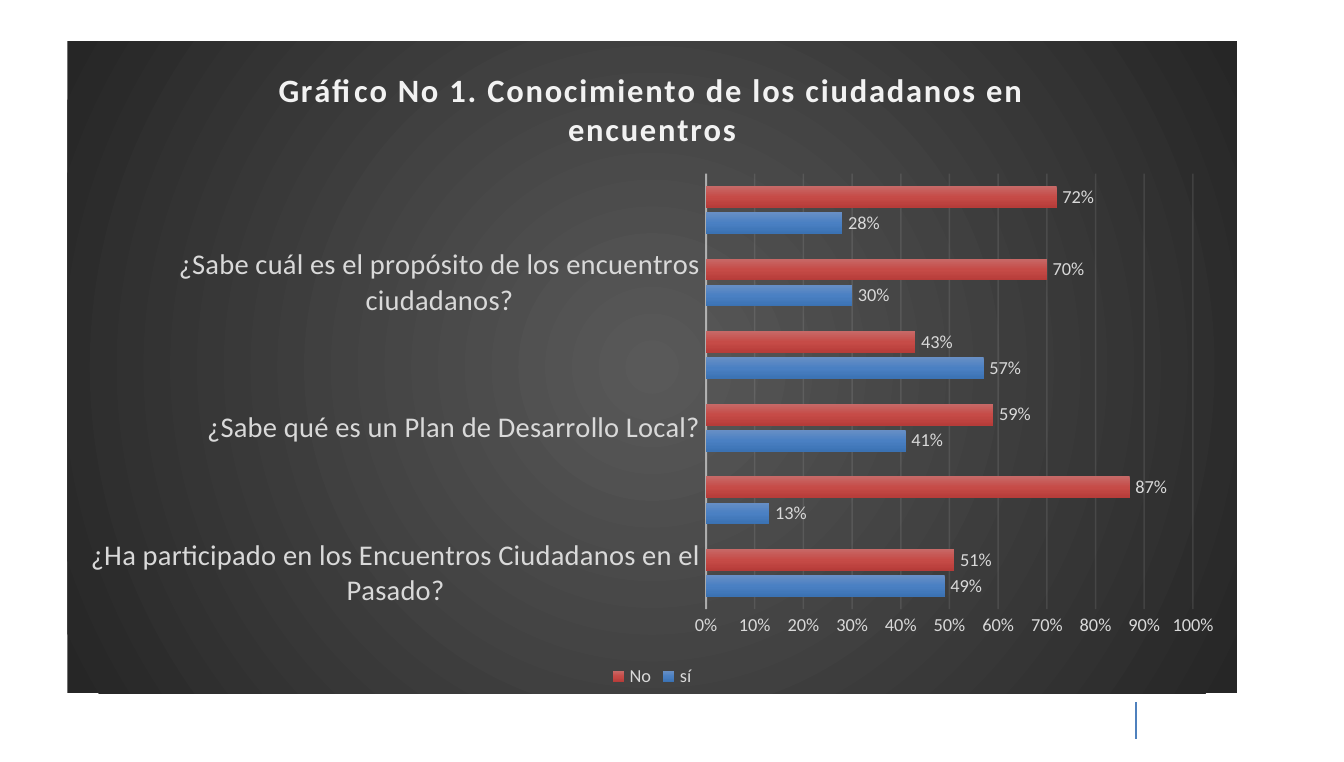
from dataclasses import dataclass

import pptx
import pptx.chart.data
import pptx.dml.color
import pptx.enum.chart
import pptx.enum.shapes
import pptx.oxml
import pptx.oxml.ns
import pptx.util
from lxml import etree

PX = 9144  # 100 px to the inch
COLORS = {"title": "F2F2F2", "text": "D9D9D9", "line": "F2F2F2", "rule": "4F81BD"}
BACK = ((0, "595959"), (100, "262626"))
RADIAL = ('<a:path path="circle"><a:fillToRect l="50000" t="50000" '
          'r="50000" b="50000"/></a:path>')
LINEAR = '<a:lin ang="5400000" scaled="0"/>'
FONT = "Calibri"
qn = pptx.oxml.ns.qn
NS = pptx.oxml.ns.nsdecls("a", "c")


@dataclass
class Answer:
    name: str
    values: tuple[float, ...]
    stops: tuple[tuple[int, str], ...]


# Every second group of bars has no label.
TOPICS = (
    "¿Ha participado en los Encuentros Ciudadanos en el Pasado?", "",
    "¿Sabe qué es un Plan de Desarrollo Local?", "",
    "¿Sabe cuál es el propósito de los encuentros ciudadanos?", "",
)
ANSWERS = (
    Answer("sí", (0.49, 0.13, 0.41, 0.57, 0.3, 0.28),
           ((0, "688FC5"), (50, "4A80C3"), (100, "3B72B3"))),
    Answer("No", (0.51, 0.87, 0.59, 0.43, 0.7, 0.72),
           ((0, "C76967"), (50, "C64B47"), (100, "B63C39"))),
)


def px(n: int) -> int:
    return pptx.util.Emu(n * PX)


def rgb(key: str) -> pptx.dml.color.RGBColor:
    return pptx.dml.color.RGBColor.from_string(COLORS[key])


def style(font, size: int, key: str = "text", bold: bool = False) -> None:
    font.name, font.size, font.bold = FONT, pptx.util.Pt(size), bold
    font.color.rgb = rgb(key)


def blend(stops: tuple, shade: str) -> str:
    """Gradient fill as XML."""
    marks = "".join(f'<a:gs pos="{pos * 1000}"><a:srgbClr val="{tone}"/></a:gs>'
                    for pos, tone in stops)
    return f'<a:gradFill {NS}><a:gsLst>{marks}</a:gsLst>{shade}</a:gradFill>'


def stroke(line, width: float, alpha: int) -> None:
    """Light line, alpha in percent."""
    line.width = pptx.util.Pt(width)
    line.color.rgb = rgb("line")
    tone = line.fill._xPr.find(".//" + qn("a:srgbClr"))
    etree.SubElement(tone, qn("a:alpha"), val=str(alpha * 1000))


def add_rule(slide) -> None:
    rule = slide.shapes.add_connector(
        pptx.enum.shapes.MSO_CONNECTOR.STRAIGHT, px(775), px(479), px(775), px(504))
    rule.line.color.rgb = rgb("rule")
    rule.line.width = pptx.util.Pt(0.75)
    etree.SubElement(rule.element.spPr, qn("a:effectLst"))


def set_title(chart) -> None:
    chart.has_title = True
    frame = chart.chart_title.text_frame
    frame.text = "Gráfico No 1. Conocimiento de los ciudadanos en encuentros"
    run = frame.paragraphs[0].runs[0]
    style(run.font, 16, "title", True)
    run._r.get_or_add_rPr().set("spc", "100")
    chart.chart_title.include_in_layout = False


def set_axes(chart) -> None:
    none = pptx.enum.chart.XL_TICK_MARK.NONE
    for axis, size in ((chart.category_axis, 14), (chart.value_axis, 9)):
        axis.major_tick_mark = axis.minor_tick_mark = none
        style(axis.tick_labels.font, size)
    stroke(chart.category_axis.format.line, 1, 54)
    scale = chart.value_axis
    scale.minimum_scale, scale.maximum_scale, scale.major_unit = 0, 1, 0.1
    scale.tick_labels.number_format = "0%"
    scale.tick_labels.number_format_is_linked = False
    scale.format.line.fill.background()
    scale.has_major_gridlines = True
    stroke(scale.major_gridlines.format.line, 0.75, 10)


def set_bars(plot) -> None:
    plot.gap_width, plot.overlap, plot.vary_by_categories = 115, -20, False
    for series, answer in zip(plot.series, ANSWERS):
        series.invert_if_negative = False
        series.format.fill.background()
        blank = series.format.fill._xPr.find(qn("a:noFill"))
        blank.getparent().replace(
            blank, pptx.oxml.parse_xml(blend(answer.stops, LINEAR)))
        labels = series.data_labels
        labels.show_value = True
        labels.number_format, labels.number_format_is_linked = "0%", False
        labels.position = pptx.enum.chart.XL_LABEL_POSITION.OUTSIDE_END
        style(labels.font, 9)


def add_chart(slide) -> None:
    data = pptx.chart.data.CategoryChartData(number_format="0%")
    data.categories = TOPICS
    for answer in ANSWERS:
        data.add_series(answer.name, answer.values)
    chart = slide.shapes.add_chart(
        pptx.enum.chart.XL_CHART_TYPE.BAR_CLUSTERED,
        px(46), px(28), px(798), px(445), data).chart
    style(chart.font, 10)
    panel = f'<c:spPr {NS}>{blend(BACK, RADIAL)}<a:ln><a:noFill/></a:ln></c:spPr>'
    chart.element.find(qn("c:chart")).addnext(pptx.oxml.parse_xml(panel))
    set_title(chart)
    set_axes(chart)
    set_bars(chart.plots[0])
    chart.has_legend = True
    chart.legend.position = pptx.enum.chart.XL_LEGEND_POSITION.BOTTOM
    chart.legend.include_in_layout = False
    style(chart.legend.font, 9)


def main() -> None:
    deck = pptx.Presentation()
    deck.slide_width, deck.slide_height = px(917), px(520)
    slide = deck.slides.add_slide(deck.slide_layouts[6])
    add_rule(slide)
    add_chart(slide)
    deck.save("out.pptx")


if __name__ == "__main__":
    main()
